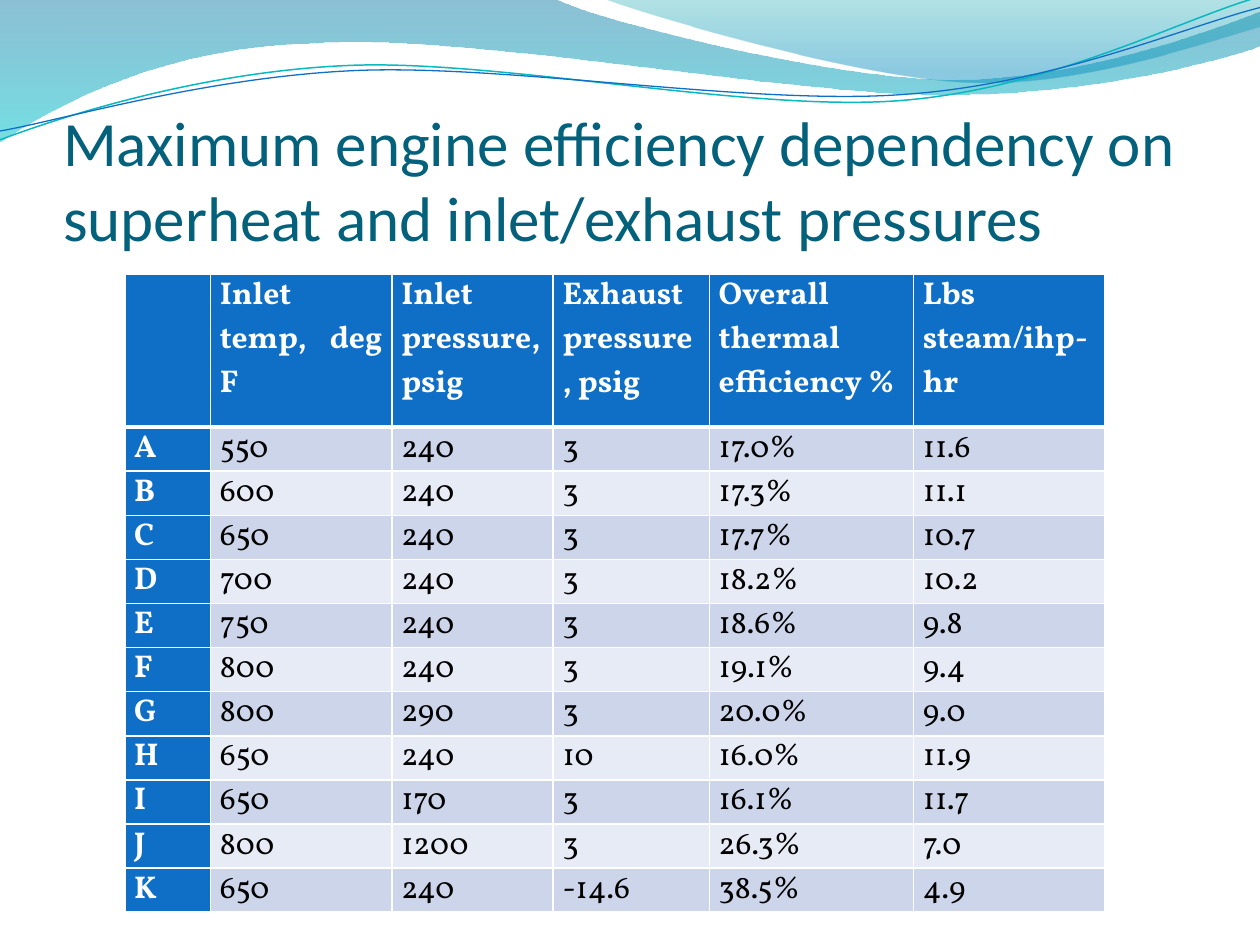
from typing import NamedTuple, Optional

from lxml.etree import SubElement
from pptx import Presentation
from pptx.dml.color import RGBColor
from pptx.enum.text import MSO_ANCHOR, PP_ALIGN
from pptx.oxml.ns import qn
from pptx.util import Inches, Pt

COLORS = {
    "white": "FFFFFF",
    "black": "000000",
    "title": "04617B",
    "blue": "0F6FC6",
    "teal": "0AB8BF",
    "band_dark": "CCD5EA",
    "band_light": "E7EBF5",
    "deep_blue": "0074A1",
    "cyan": "00C6CF",
    "sea_green": "00A1A9",
    "sky_blue": "008BBF",
}
COLUMN_WIDTHS = [0.68, 1.44, 1.28, 1.24, 1.62, 1.52]
HEADER_HEIGHT = 1.21
ROW_HEIGHT = 0.35

ROWS = [
    ["", "Inlet temp, deg F", "Inlet pressure, psig", "Exhaust pressure, psig",
     "Overall thermal efficiency %", "Lbs steam/ihp-hr"],
    ["A", "550", "240", "3", "17.0%", "11.6"],
    ["B", "600", "240", "3", "17.3%", "11.1"],
    ["C", "650", "240", "3", "17.7%", "10.7"],
    ["D", "700", "240", "3", "18.2%", "10.2"],
    ["E", "750", "240", "3", "18.6%", "9.8"],
    ["F", "800", "240", "3", "19.1%", "9.4"],
    ["G", "800", "290", "3", "20.0%", "9.0"],
    ["H", "650", "240", "10", "16.0%", "11.9"],
    ["I", "650", "170", "3", "16.1%", "11.7"],
    ["J", "800", "1200", "3", "26.3%", "7.0"],
    ["K", "650", "240", "-14.6", "38.5%", "4.9"],
]


class GradientStop(NamedTuple):
    position: float
    color: str
    opacity: int


class Wave(NamedTuple):
    segments: list
    gradient: Optional[list] = None
    line_color: str = ""
    line_width: float = 0


WAVES = [
    Wave([(0, 0), (4.4, -0.01), (4.76, 0.17, 6.64, 0.63, 7.58, 0.63),
          (8.53, 0.63, 9.58, 0.26, 10, 0.09), (10.01, 0.36),
          (9.83, 0.44, 8.7, 0.76, 7.46, 0.75), (6.22, 0.75, 3.82, 0.28, 2.57, 0.34),
          (1.29, 0.36, 0.46, 0.83, -0.01, 1.13), (0, 0)],
         gradient=[GradientStop(0, "deep_blue", 45), GradientStop(1, "cyan", 55)]),
    Wave([(4.79, -0.01), (5.09, 0.11, 6.82, 0.62, 7.69, 0.65),
          (8.56, 0.69, 9.61, 0.32, 10, 0.21), (10, 0), (4.79, -0.01)],
         gradient=[GradientStop(0, "sea_green", 30), GradientStop(0.8, "sky_blue", 45)]),
    Wave([(0, 1.11), (0.48, 0.93, 1.58, 0.57, 2.77, 0.52),
          (3.95, 0.47, 5.93, 0.89, 7.13, 0.8), (8.33, 0.71, 9.38, 0.15, 9.98, -0.02)],
         line_color="teal", line_width=0.85),
    Wave([(0, 1.04), (0.47, 0.96, 1.64, 0.61, 2.83, 0.56),
          (4.03, 0.51, 5.97, 0.84, 7.17, 0.75), (8.36, 0.67, 9.41, 0.21, 10, 0.06)],
         line_color="blue", line_width=0.75),
]


def rgb(name: str) -> RGBColor:
    return RGBColor.from_string(COLORS[name])


def bend_segments(shape, segments: list) -> None:
    lines = iter(shape.element.spPr.findall(".//" + qn("a:lnTo")))
    for segment in segments[1:]:
        line = next(lines)
        if len(segment) == 2:
            continue
        curve = line.makeelement(qn("a:cubicBezTo"))
        line.addprevious(curve)
        for piece in (line, next(lines), next(lines)):
            curve.append(piece[0])
            piece.getparent().remove(piece)


def draw_wave(slide, wave: Wave) -> None:
    points = [(Inches(x), Inches(y)) for segment in wave.segments
              for x, y in zip(segment[::2], segment[1::2])]
    builder = slide.shapes.build_freeform(*points[0])
    builder.add_line_segments(points[1:], close=wave.gradient is not None)
    shape = builder.convert_to_shape()
    bend_segments(shape, wave.segments)
    shape.shadow.inherit = False
    if wave.gradient is None:
        shape.fill.background()
        shape.line.color.rgb = rgb(wave.line_color)
        shape.line.width = Pt(wave.line_width)
        return
    shape.line.fill.background()
    shape.fill.gradient()
    shape.fill.gradient_angle = 270
    for stop, wanted in zip(shape.fill.gradient_stops, wave.gradient):
        stop.position = wanted.position
        stop.color.rgb = rgb(wanted.color)
    gradient_colors = shape.element.spPr.findall(".//" + qn("a:gs") + "/" + qn("a:srgbClr"))
    for color, wanted in zip(gradient_colors, wave.gradient):
        SubElement(color, qn("a:alpha"), val=str(wanted.opacity * 1000))


def add_text(paragraph, text: str, font: str, size: int, color: str, bold: bool = False) -> None:
    run = paragraph.add_run()
    run.text = text
    run.font.name = font
    run.font.size = Pt(size)
    run.font.bold = bold
    run.font.color.rgb = rgb(color)


def draw_title(slide, text: str) -> None:
    box = slide.shapes.add_textbox(Inches(0.5), Inches(0.77), Inches(9.08), Inches(1.25))
    frame = box.text_frame
    frame.word_wrap = True
    frame.vertical_anchor = MSO_ANCHOR.BOTTOM
    frame.margin_left = frame.margin_right = frame.margin_bottom = 0
    frame.margin_top = Inches(0.05)
    add_text(frame.paragraphs[0], text, "Calibri", 36, "title")


def set_border(cell, side: str, width: float) -> None:
    properties = cell._tc.get_or_add_tcPr()
    line = SubElement(properties, qn(f"a:ln{side}"), w=str(Pt(width)))
    fill = SubElement(line, qn("a:solidFill"))
    SubElement(fill, qn("a:srgbClr"), val=COLORS["white"])


def fill_cell(cell, text: str, row: int, column: int) -> None:
    heading = row == 0 or column == 0
    cell.margin_left = cell.margin_right = Pt(5.4)
    cell.margin_top = cell.margin_bottom = 0
    heavy_side = {0: "B", 1: "T"}.get(row)
    for side in "LRTB":
        set_border(cell, side, 3 if side == heavy_side else 1)
    cell.fill.solid()
    band = "band_dark" if row % 2 else "band_light"
    cell.fill.fore_color.rgb = rgb("blue" if heading else band)
    paragraph = cell.text_frame.paragraphs[0]
    paragraph.alignment = PP_ALIGN.JUSTIFY
    if text:
        add_text(paragraph, text, "Vollkorn", 18, "white" if heading else "black", heading)


def draw_table(slide, rows: list) -> None:
    heights = [HEADER_HEIGHT] + [ROW_HEIGHT] * (len(rows) - 1)
    table = slide.shapes.add_table(
        len(rows), len(COLUMN_WIDTHS), Inches(0.99), Inches(2.18),
        Inches(sum(COLUMN_WIDTHS)), Inches(sum(heights))).table
    table.first_col = True
    for column, width in zip(table.columns, COLUMN_WIDTHS):
        column.width = Inches(width)
    for row_index, (height, texts) in enumerate(zip(heights, rows)):
        table.rows[row_index].height = Inches(height)
        for column_index, text in enumerate(texts):
            fill_cell(table.cell(row_index, column_index), text, row_index, column_index)


def main() -> None:
    presentation = Presentation()
    presentation.slide_width = Inches(10)
    presentation.slide_height = Inches(7.5)
    slide = presentation.slides.add_slide(presentation.slide_layouts[6])
    for wave in WAVES:
        draw_wave(slide, wave)
    draw_title(slide, "Maximum engine efficiency dependency on superheat and inlet/exhaust pressures")
    draw_table(slide, ROWS)
    presentation.save("out.pptx")


if __name__ == "__main__":
    main()
